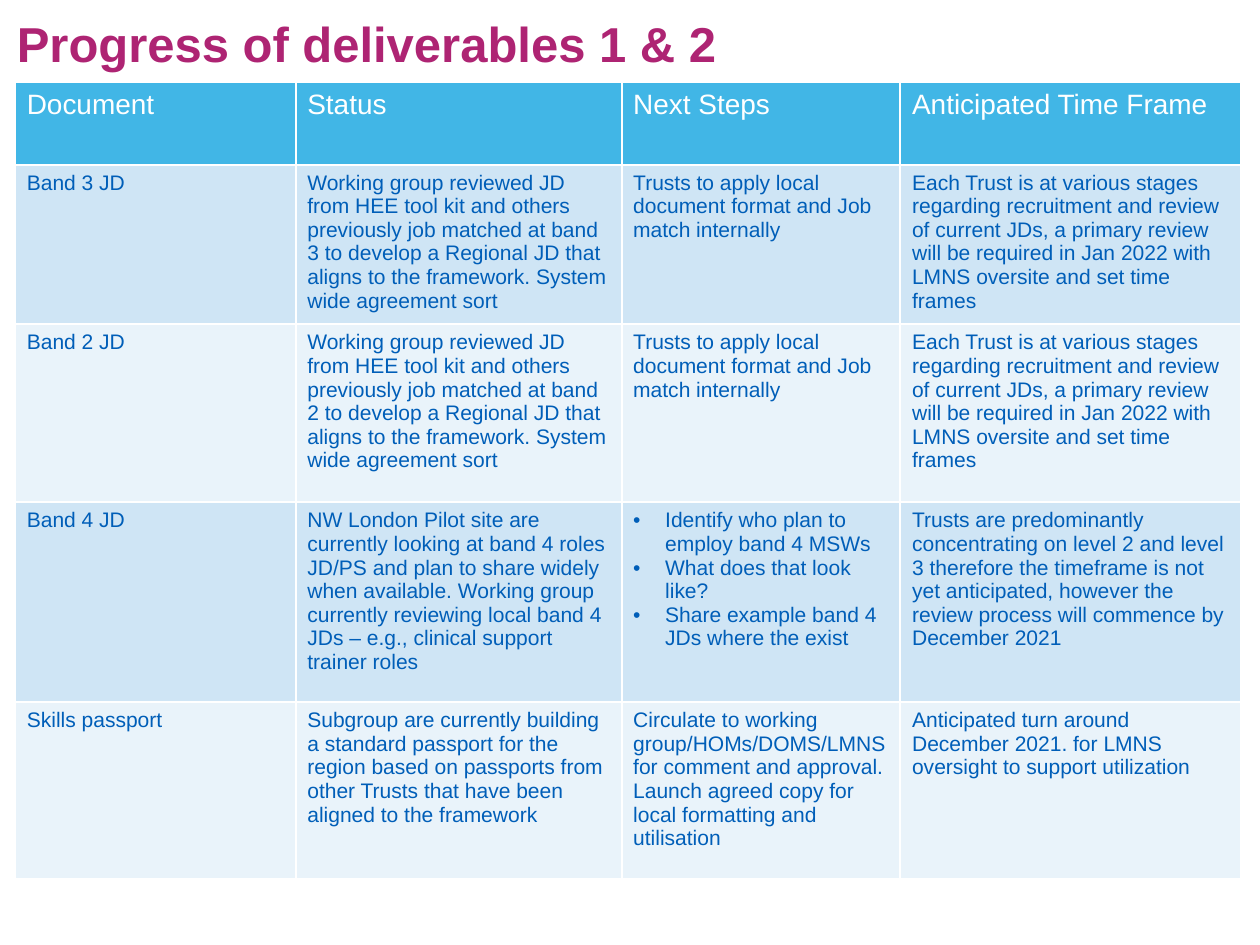
from dataclasses import dataclass

from lxml.etree import SubElement
from pptx import Presentation
from pptx.dml.color import RGBColor
from pptx.enum.text import MSO_ANCHOR, MSO_AUTO_SIZE, PP_ALIGN
from pptx.oxml.ns import qn
from pptx.slide import Slide
from pptx.table import _Cell
from pptx.text.text import Font, _Paragraph
from pptx.util import Inches, Pt

SLIDE_WIDTH = 7.5
COLOURS = {
    "title": "AE2473",
    "header": "41B6E6",
    "odd": "CFE5F5",
    "even": "E9F3FA",
    "body": "005EB8",
    "white": "FFFFFF",
}
COLUMN_WIDTHS = (1.67, 1.94, 1.66, 2.03)
HEADINGS = ("Document", "Status", "Next Steps", "Anticipated Time Frame")
LOCAL_MATCH = "Trusts to apply local document format and Job match internally"
TRUST_STAGES = (
    "Each Trust is at various stages regarding recruitment and review of current JDs, "
    "a primary review will be required in Jan 2022 with LMNS oversite and set time frames"
)


@dataclass
class Deliverable:
    """One row of the progress table."""

    document: str
    status: str
    next_steps: str | list[str]
    time_frame: str
    height: float


def reviewed(band: int) -> str:
    """Return the status shared by the reviewed job descriptions."""
    return (
        "Working group reviewed JD from HEE tool kit and others previously job matched "
        f"at band {band} to develop a Regional JD that aligns to the framework. "
        "System wide agreement sort"
    )


DELIVERABLES = [
    Deliverable("Band 3 JD", reviewed(3), LOCAL_MATCH, TRUST_STAGES, 0.95),
    Deliverable("Band 2 JD", reviewed(2), LOCAL_MATCH, TRUST_STAGES, 1.06),
    Deliverable(
        "Band 4 JD",
        "NW London Pilot site are currently looking at band 4 roles JD/PS and plan to share "
        "widely when available. Working group currently reviewing local band 4 JDs – e.g., "
        "clinical support trainer roles",
        [
            "Identify who plan to employ band 4 MSWs",
            "What does that look like?",
            "Share example band 4 JDs where the exist",
        ],
        "Trusts are predominantly concentrating on level 2 and level 3 therefore the timeframe "
        "is not yet anticipated, however the review process will commence by December 2021",
        1.19,
    ),
    Deliverable(
        "Skills passport",
        "Subgroup are currently building a standard passport for the region based on passports "
        "from other Trusts that have been aligned to the framework",
        "Circulate to working group/HOMs/DOMS/LMNS for comment and approval. Launch agreed "
        "copy for local formatting and utilisation",
        "Anticipated turn around December 2021. for LMNS oversight to support utilization",
        1.05,
    ),
]


def style_font(font: Font, size: float, colour: str, bold: bool = False) -> None:
    """Apply the slide typeface with a size, colour and weight."""
    font.name = "Arial"
    font.size = Pt(size)
    font.bold = bold
    font.color.rgb = RGBColor.from_string(COLOURS[colour])


def add_bullet(paragraph: _Paragraph) -> None:
    """Give a paragraph a hanging round bullet."""
    properties = paragraph._p.get_or_add_pPr()
    properties.set("marL", str(Inches(0.19)))
    properties.set("indent", str(-Inches(0.19)))
    SubElement(properties, qn("a:buFont"), typeface="Arial")
    SubElement(properties, qn("a:buChar"), char="•")


def add_borders(cell: _Cell) -> None:
    """Draw a thin white line on each side of a cell."""
    properties = cell._tc.get_or_add_tcPr()
    for side in ("lnL", "lnR", "lnT", "lnB"):
        line = SubElement(properties, qn(f"a:{side}"), w=str(Pt(1)))
        fill = SubElement(line, qn("a:solidFill"))
        SubElement(fill, qn("a:srgbClr"), val=COLOURS["white"])


def fill_cell(cell: _Cell, content: str | list[str], size: float, colour: str, fill: str) -> None:
    """Write plain text or a bulleted list into a formatted cell."""
    add_borders(cell)
    cell.fill.solid()
    cell.fill.fore_color.rgb = RGBColor.from_string(COLOURS[fill])
    cell.margin_left = cell.margin_right = Inches(0.07)
    cell.margin_top = cell.margin_bottom = Inches(0.04)
    bulleted = isinstance(content, list)
    cell.text_frame.text = "\n".join(content) if bulleted else content
    for paragraph in cell.text_frame.paragraphs:
        if bulleted:
            add_bullet(paragraph)
        for run in paragraph.runs:
            style_font(run.font, size, colour)


def add_heading(slide: Slide) -> None:
    """Place and format the slide title."""
    heading = slide.shapes.title
    heading.left, heading.top = Inches(0), Inches(0)
    heading.width, heading.height = Inches(6.38), Inches(0.56)
    frame = heading.text_frame
    frame.text = "Progress of deliverables 1 & 2"
    frame.auto_size = MSO_AUTO_SIZE.NONE
    frame.vertical_anchor = MSO_ANCHOR.MIDDLE
    paragraph = frame.paragraphs[0]
    paragraph.alignment = PP_ALIGN.LEFT
    paragraph.line_spacing = 0.9
    style_font(paragraph.runs[0].font, 21, "title", bold=True)


def add_progress(slide: Slide) -> None:
    """Build the table of deliverables."""
    heights = [0.49] + [deliverable.height for deliverable in DELIVERABLES]
    progress = slide.shapes.add_table(
        len(heights), len(HEADINGS), Inches(0.09), Inches(0.49),
        Inches(sum(COLUMN_WIDTHS)), Inches(sum(heights)),
    ).table
    for column, width in zip(progress.columns, COLUMN_WIDTHS):
        column.width = Inches(width)
    for row, height in zip(progress.rows, heights):
        row.height = Inches(height)
    for cell, label in zip(progress.rows[0].cells, HEADINGS):
        fill_cell(cell, label, 12, "white", "header")
    for number, item in enumerate(DELIVERABLES, start=1):
        contents = (item.document, item.status, item.next_steps, item.time_frame)
        for cell, content in zip(progress.rows[number].cells, contents):
            fill_cell(cell, content, 9, "body", "odd" if number % 2 else "even")


def main() -> None:
    """Create and save the slide in a four by three format."""
    presentation = Presentation()
    presentation.slide_width = Inches(SLIDE_WIDTH)
    presentation.slide_height = Inches(SLIDE_WIDTH * 3 / 4)
    slide = presentation.slides.add_slide(presentation.slide_layouts[5])
    add_heading(slide)
    add_progress(slide)
    presentation.save("out.pptx")


if __name__ == "__main__":
    main()
